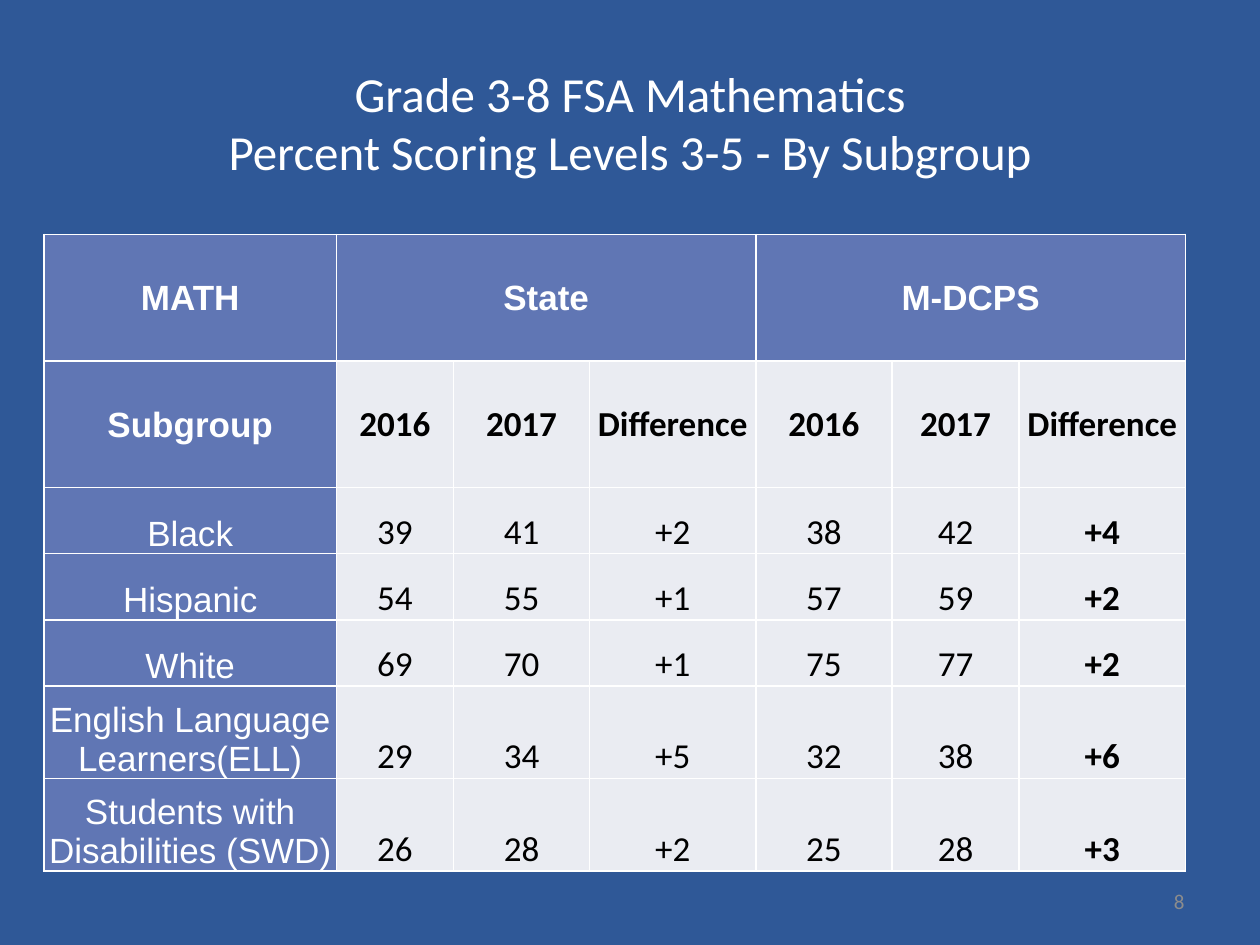
from dataclasses import dataclass

from lxml.etree import SubElement
from pptx import Presentation
from pptx.dml.color import RGBColor
from pptx.enum.text import MSO_ANCHOR, PP_ALIGN
from pptx.oxml.ns import qn
from pptx.util import Emu, Inches, Pt


@dataclass(frozen=True)
class Theme:
    background: str = "2F5897"
    header: str = "6076B4"
    body: str = "EAECF2"
    light: str = "FFFFFF"
    dark: str = "000000"
    muted: str = "8C8C8C"
    label_font: str = "Arial"
    font: str = "Calibri"
    title_size: int = 28
    table_size: int = 20
    small_size: int = 12


# Percentages of the slide width and height
COLUMNS = [23.2, 9.3, 10.8, 13.2, 10.8, 10.1, 13.2]
ROWS = [13.4, 13.4, 7, 7, 7, 9.8, 9.8]

YEARS = ["2016", "2017", "Difference"]
RESULTS = [
    ["MATH", "State", "", "", "M-DCPS", "", ""],
    ["Subgroup", *YEARS, *YEARS],
    ["Black", "39", "41", "+2", "38", "42", "+4"],
    ["Hispanic", "54", "55", "+1", "57", "59", "+2"],
    ["White", "69", "70", "+1", "75", "77", "+2"],
    ["English Language Learners(ELL)", "29", "34", "+5", "32", "38", "+6"],
    ["Students with Disabilities (SWD)", "26", "28", "+2", "25", "28", "+3"],
]


class SlideBuilder:
    """Adds styled elements, with lengths in percent of the slide's size."""

    def __init__(self, prs, theme):
        self.prs, self.theme = prs, theme
        self.slide = prs.slides.add_slide(prs.slide_layouts[6])
        fill = self.slide.background.fill
        fill.solid()
        fill.fore_color.rgb = RGBColor.from_string(theme.background)

    def x(self, share):
        return Emu(round(self.prs.slide_width * share / 100))

    def y(self, share):
        return Emu(round(self.prs.slide_height * share / 100))

    def style(self, p, size, color, align, font, bold=False):
        p.alignment = align
        p.font.size = Pt(size)
        p.font.name = font
        p.font.bold = bold
        p.font.color.rgb = RGBColor.from_string(color)

    def text(self, text, left, top, width, height, size, color, align):
        sp = self.slide.shapes.add_textbox(
            self.x(left), self.y(top), self.x(width), self.y(height))
        tf = sp.text_frame
        tf.word_wrap = True
        tf.vertical_anchor = MSO_ANCHOR.MIDDLE
        p = tf.paragraphs[0]
        p.text = text
        self.style(p, size, color, align, self.theme.font)

    def borders(self, cell):
        tc_pr = cell._tc.get_or_add_tcPr()
        for i, side in enumerate(("lnL", "lnR", "lnT", "lnB")):
            ln = SubElement(tc_pr, qn(f"a:{side}"), w=str(Pt(1)))
            fill = SubElement(ln, qn("a:solidFill"))
            SubElement(fill, qn("a:srgbClr"), val=self.theme.light)
            tc_pr.insert(i, ln)

    def cell(self, cell, text, row, col):
        t = self.theme
        is_label = row == 0 or col == 0
        is_heading = row < 2
        cell.fill.solid()
        cell.fill.fore_color.rgb = RGBColor.from_string(
            t.header if is_label else t.body)
        self.borders(cell)
        cell.margin_left = cell.margin_right = cell.margin_top = Inches(0.01)
        cell.margin_bottom = 0
        cell.vertical_anchor = (
            MSO_ANCHOR.MIDDLE if is_heading else MSO_ANCHOR.BOTTOM)
        if text:
            p = cell.text_frame.paragraphs[0]
            p.text = text
            self.style(p, t.table_size, t.light if is_label else t.dark,
                       PP_ALIGN.CENTER, t.label_font if is_label else t.font,
                       bold=is_heading or col == len(COLUMNS) - 1)

    def table(self, data, left, top, columns, rows, merges):
        table = self.slide.shapes.add_table(
            len(rows), len(columns), self.x(left), self.y(top),
            self.x(sum(columns)), self.y(sum(rows))).table
        table.first_row = table.horz_banding = False
        for column, share in zip(table.columns, columns):
            column.width = self.x(share)
        for row, share in zip(table.rows, rows):
            row.height = self.y(share)
        for r, values in enumerate(data):
            for c, value in enumerate(values):
                self.cell(table.cell(r, c), value, r, c)
        for first, last in merges:
            table.cell(*first).merge(table.cell(*last))


def main():
    prs = Presentation()
    prs.slide_width, prs.slide_height = Inches(10), Inches(7.5)
    theme = Theme()
    s = SlideBuilder(prs, theme)
    s.text("Grade 3-8 FSA Mathematics\vPercent Scoring Levels 3-5 - By Subgroup",
           5, 4, 90, 17.8, theme.title_size, theme.light, PP_ALIGN.CENTER)
    s.table(RESULTS, 3.5, 24.8, COLUMNS, ROWS,
            merges=[((0, 1), (0, 3)), ((0, 4), (0, 6))])
    s.text("8", 71.7, 92.7, 23.3, 5.3,
           theme.small_size, theme.muted, PP_ALIGN.RIGHT)
    prs.save("out.pptx")


if __name__ == "__main__":
    main()
